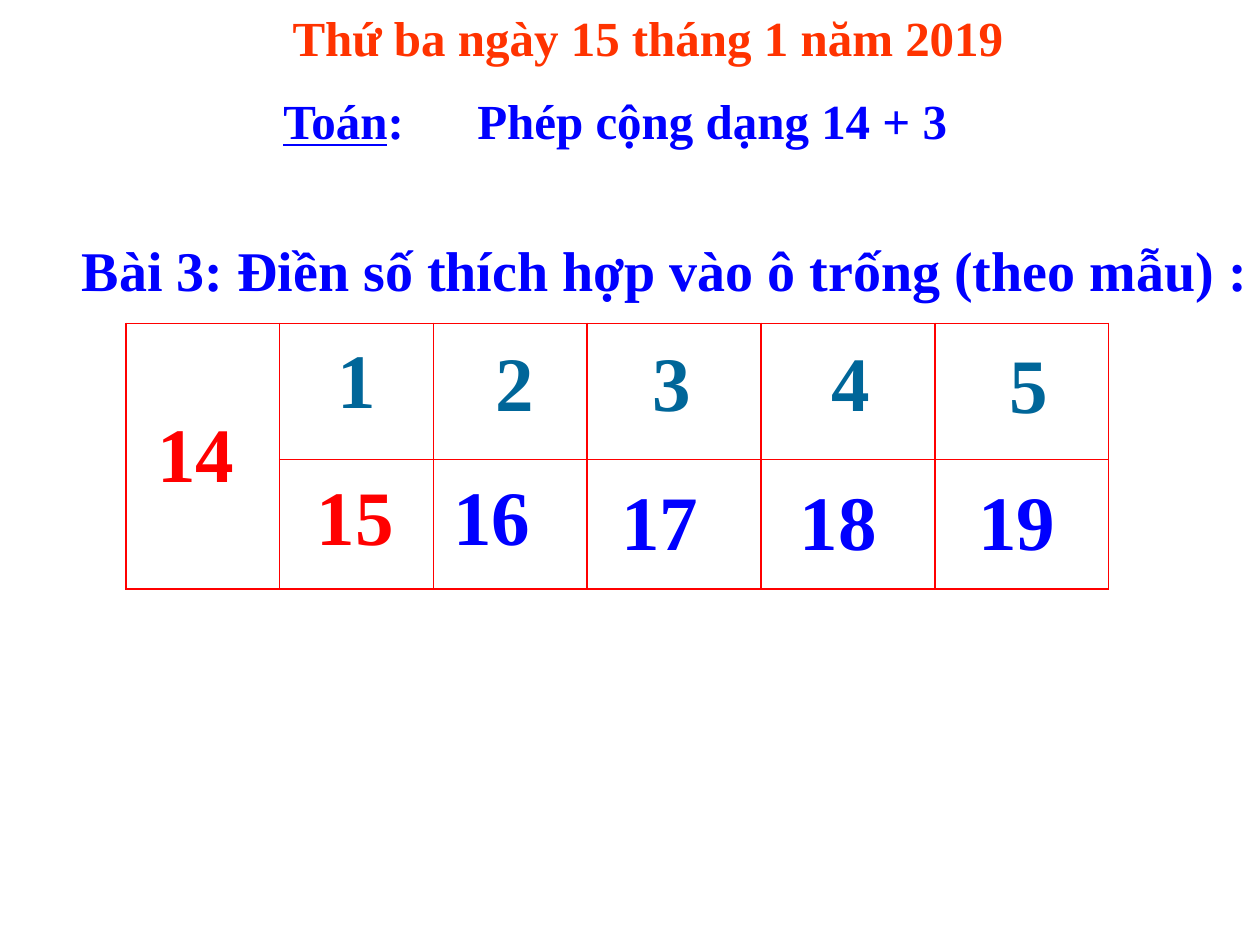
from dataclasses import dataclass

from lxml import etree
from pptx import Presentation
from pptx import util as u
from pptx.dml.color import RGBColor
from pptx.enum import text
from pptx.oxml.ns import qn

FONT = "Times New Roman"
BLUE, RED, TEAL, ORANGE = "0000FF", "FF0000", "006699", "FF3300"
COLUMNS_PER_INCH = 12
NUMBER_SIZE = 44


@dataclass
class Label:
    """Text with its place on a grid of 120 columns by 90 rows."""
    wording: str
    column: float
    row: float
    columns: float
    rows: float = 10
    color: str = BLUE
    size: int = NUMBER_SIZE


ADDENDS = [
    Label("1", 31, 31, 10, color=TEAL),
    Label("2", 46, 31.25, 10, color=TEAL),
    Label("3", 61, 31.25, 10, color=TEAL),
    Label("4", 78, 31.25, 10, color=TEAL),
    Label("5", 95, 31.5, 10, color=TEAL),
]
SUMS = [
    Label("15", 29, 44, 10, color=RED),
    Label("16", 42, 44, 13),
    Label("17", 58, 44.5, 12),
    Label("18", 75, 44.5, 12),
    Label("19", 92, 44.5, 10),
]
EXERCISE = Label("Bài 3: Điền số thích hợp vào ô trống (theo mẫu) :",
                 0, 21.8, 124, 7.6, size=32)
HEADING = Label("Thứ ba ngày 15 tháng 1 năm 2019",
                25.8, 0.1, 71.8, 15.4, ORANGE, 28)


def grid(count: float) -> int:
    """Turn grid columns or rows into a length."""
    return u.Inches(count / COLUMNS_PER_INCH)


def style(font, size: int, color: str) -> None:
    """Apply the bold lesson typeface."""
    font.name, font.size, font.bold = FONT, u.Pt(size), True
    font.color.rgb = RGBColor.from_string(color)


def add_label(slide, label: Label):
    """Draw one label and return its text frame."""
    shape = slide.shapes.add_textbox(grid(label.column), grid(label.row),
                                     grid(label.columns), grid(label.rows))
    frame = shape.text_frame
    frame.word_wrap = True
    frame.text = label.wording
    style(frame.paragraphs[0].runs[0].font, label.size, label.color)
    return frame


def add_heading(slide) -> None:
    """Draw the date with the lesson title below it."""
    frame = add_label(slide, HEADING)
    frame.paragraphs[0].alignment = text.PP_ALIGN.CENTER
    paragraph = frame.add_paragraph()
    paragraph.space_before = u.Pt(14)
    tabs = etree.SubElement(paragraph._p.get_or_add_pPr(), qn("a:tabLst"))
    etree.SubElement(tabs, qn("a:tab"), pos=str(u.Inches(1.54)), algn="l")
    for wording, underline in (("Toán", True), (":\tPhép cộng dạng 14 + 3", False)):
        run = paragraph.add_run()
        run.text = wording
        style(run.font, HEADING.size, BLUE)
        run.font.underline = underline


def add_borders(cell, color: str) -> None:
    """Outline a cell on all four sides."""
    properties = cell._tc.get_or_add_tcPr()
    for index, side in enumerate(("lnL", "lnR", "lnT", "lnB")):
        line = etree.Element(qn(f"a:{side}"), w=str(u.Pt(1)))
        fill = etree.SubElement(line, qn("a:solidFill"))
        etree.SubElement(fill, qn("a:srgbClr"), val=color)
        properties.insert(index, line)


def add_sum_table(slide) -> None:
    """Draw the table whose first column holds the fixed addend."""
    widths, heights = [1.22] * 3 + [1.38] * 3, [1.08, 1.03]
    table = slide.shapes.add_table(
        len(heights), len(widths), grid(12), grid(30.8),
        u.Inches(sum(widths)), u.Inches(sum(heights))).table
    table.first_row = table.horz_banding = False
    for column, width in zip(table.columns, widths):
        column.width = u.Inches(width)
    for row, height in zip(table.rows, heights):
        row.height = u.Inches(height)
    for cell in table.iter_cells():
        cell.fill.background()
        add_borders(cell, RED)
    addend = table.cell(0, 0)
    addend.merge(table.cell(1, 0))
    addend.text_frame.text = "14"
    addend.vertical_anchor = text.MSO_ANCHOR.MIDDLE
    addend.margin_left = u.Inches(0.25)
    style(addend.text_frame.paragraphs[0].runs[0].font, NUMBER_SIZE, RED)


def main() -> None:
    """Build the addition lesson slide."""
    presentation = Presentation()
    presentation.slide_width, presentation.slide_height = grid(120), grid(90)
    slide = presentation.slides.add_slide(presentation.slide_layouts[6])
    add_label(slide, EXERCISE).margin_left = u.Inches(0.65)
    add_sum_table(slide)
    for label in SUMS + ADDENDS:
        add_label(slide, label)
    add_heading(slide)
    presentation.save("out.pptx")


if __name__ == "__main__":
    main()
